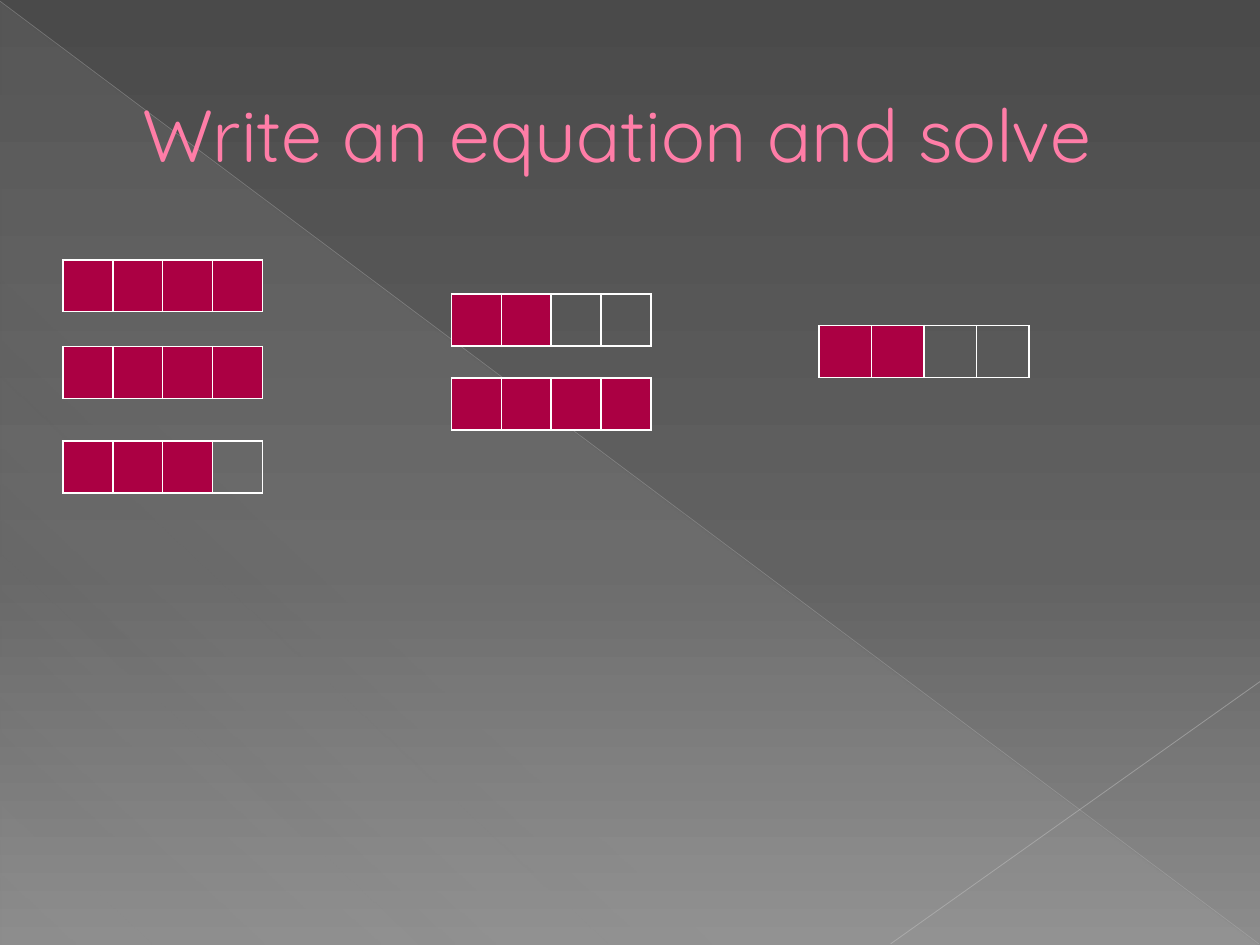
from dataclasses import dataclass

from lxml import etree
from pptx import Presentation
from pptx.dml.color import RGBColor
from pptx.enum import shapes, text
from pptx.oxml import ns
from pptx.util import Pt

TITLE_ONLY = 5
CELL_COUNT = 4
WHITE = "FFFFFF"
CRIMSON = "AB0043"


@dataclass(frozen=True)
class Stop:
    position: int
    color: str
    opacity: int = 100


@dataclass(frozen=True)
class Ray:
    start: tuple[float, float]
    end: tuple[float, float]
    color: str
    width: float
    opacity: int


@dataclass(frozen=True)
class FractionBar:
    left: float
    top: float
    shaded: int
    cell_width: float = 28.5
    height: float = 29.6


RAYS = [
    Ray((0, 0.7), (719.3, 539.3), "BFBFBF", 0.39, 35),
    Ray((720, 389.5), (509, 539.3), "C6C6C6", 0.47, 45),
]
BARS = [
    FractionBar(36, 148.5, 4),
    FractionBar(258, 168, 2),
    FractionBar(36, 198, 4),
    FractionBar(36, 252, 3),
    FractionBar(258, 216, 4),
    FractionBar(468, 186, 2, cell_width=30),
]


def rgb(color: str) -> RGBColor:
    return RGBColor.from_string(color)


def add_element(parent, name: str, **attributes):
    values = {key: str(value) for key, value in attributes.items()}
    return etree.SubElement(parent, ns.qn(f"a:{name}"), values)


def add_color(parent, color: str, opacity: int = 100) -> None:
    element = add_element(parent, "srgbClr", val=color)
    if opacity < 100:
        add_element(element, "alpha", val=opacity * 1000)


def add_solid_line(parent, name: str, color: str, width: float) -> None:
    line = add_element(parent, name, w=int(Pt(width)))
    add_color(add_element(line, "solidFill"), color)


def set_gradient(fill, owner, stops: list[Stop], angle: int) -> None:
    """Give fill, which lies inside the element owner, a linear gradient."""
    fill.gradient()
    gradient = next(owner.iter(ns.qn("a:gradFill")))
    for child in list(gradient):
        gradient.remove(child)
    stop_list = add_element(gradient, "gsLst")
    for stop in stops:
        element = add_element(stop_list, "gs", pos=stop.position * 1000)
        add_color(element, stop.color, stop.opacity)
    add_element(gradient, "lin", ang=angle * 60000, scaled=0)


def add_triangle(slide) -> None:
    triangle = slide.shapes.add_shape(
        shapes.MSO_SHAPE.RIGHT_TRIANGLE, Pt(0.5), Pt(1), Pt(719), Pt(539))
    triangle.shadow.inherit = False
    triangle.line.fill.background()
    stops = [Stop(0, "D2D2D2", 10), Stop(70, "D2D2D2", 8), Stop(100, "D2D2D2", 1)]
    set_gradient(triangle.fill, triangle.element, stops, 133)


def add_ray(slide, ray: Ray) -> None:
    points = [Pt(value) for value in ray.start + ray.end]
    connector = slide.shapes.add_connector(shapes.MSO_CONNECTOR.STRAIGHT, *points)
    connector.line.width = Pt(ray.width)
    connector.line.color.rgb = rgb(ray.color)
    properties = connector.element.spPr
    color = next(properties.iter(ns.qn("a:srgbClr")))
    add_element(color, "alpha", val=ray.opacity * 1000)
    add_element(properties, "effectLst")


def format_title(slide) -> None:
    title = slide.shapes.title
    slide.shapes.element.append(title.element)  # in front of the backdrop
    title.left, title.top, title.width, title.height = Pt(36), Pt(21), Pt(648), Pt(110)
    title.text_frame.vertical_anchor = text.MSO_ANCHOR.MIDDLE
    paragraph = title.text_frame.paragraphs[0]
    paragraph.alignment = text.PP_ALIGN.LEFT
    run = paragraph.add_run()
    run.text = "Write an equation and solve"
    properties = run.font._element if hasattr(run.font, "_element") else run._r.get_or_add_rPr()
    add_solid_line(properties, "ln", "B12761", 0.5)
    run.font.name = "Quicksand"
    run.font.size = Pt(42)
    run.font.color.rgb = rgb("FF7DA7")
    indent = paragraph._p.get_or_add_pPr()
    indent.set("marL", str(int(Pt(38))))
    indent.set("indent", "0")


def add_fraction_bar(slide, bar: FractionBar) -> None:
    frame = slide.shapes.add_table(
        1, CELL_COUNT, Pt(bar.left), Pt(bar.top),
        Pt(bar.cell_width * CELL_COUNT), Pt(bar.height))
    table = frame.table
    table.first_row = table.horz_banding = False
    for index, cell in enumerate(table.rows[0].cells):
        cell.margin_top = cell.margin_bottom = 0
        properties = cell._tc.get_or_add_tcPr()
        for side in ("lnL", "lnR", "lnT", "lnB"):
            add_solid_line(properties, side, WHITE, 1)
        if index < bar.shaded:
            cell.fill.solid()
            cell.fill.fore_color.rgb = rgb(CRIMSON)
        else:
            cell.fill.background()


def main() -> None:
    presentation = Presentation()
    presentation.slide_width, presentation.slide_height = Pt(720), Pt(540)
    slide = presentation.slides.add_slide(presentation.slide_layouts[TITLE_ONLY])
    backdrop = [Stop(0, "4A4A4A"), Stop(60, "626262"), Stop(100, "8C8C8C")]
    set_gradient(slide.background.fill, slide.element, backdrop, 90)
    add_triangle(slide)
    for ray in RAYS:
        add_ray(slide, ray)
    format_title(slide)
    for bar in BARS:
        add_fraction_bar(slide, bar)
    presentation.save("out.pptx")


if __name__ == "__main__":
    main()
